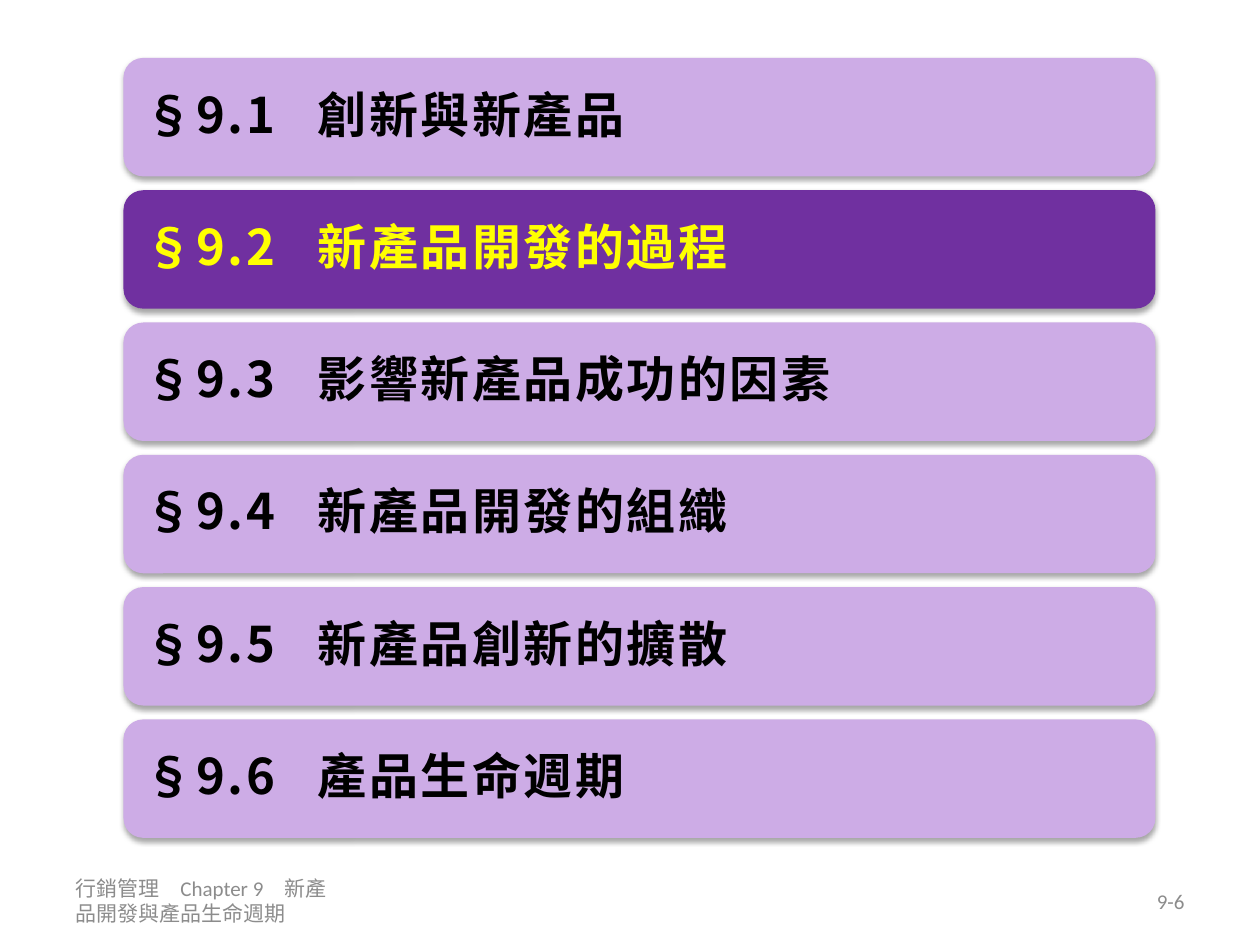
from dataclasses import dataclass

from lxml.etree import SubElement
from pptx import Presentation
from pptx.dml.color import RGBColor as Rgb
from pptx.enum.shapes import MSO_SHAPE as Shape
from pptx.enum.text import MSO_ANCHOR as Anchor, PP_ALIGN as Align
from pptx.oxml.ns import qn
from pptx.util import Inches, Pt

COLORS = {
    "pale": "CDACE6",
    "deep": "7030A0",
    "ink": "000000",
    "glow": "FFFF00",
    "gray": "8C8C8C",
}
HEAD_FONT = "Noto Sans CJK SC"
FOOT_FONT = "Calibri"
LEFT, TOP, WIDTH, HEIGHT = 0.98, 0.46, 8.19, 0.94
PITCH = 1.05
INSET = 0.05
PAD = 0.12
TAB = 1.37


@dataclass
class Topic:
    label: str
    title: str
    active: bool = False


@dataclass
class Note:
    text: str
    left: float
    align: Align


TOPICS = [
    Topic("§9.1", "創新與新產品"),
    Topic("§9.2", "新產品開發的過程", True),
    Topic("§9.3", "影響新產品成功的因素"),
    Topic("§9.4", "新產品開發的組織"),
    Topic("§9.5", "新產品創新的擴散"),
    Topic("§9.6", "產品生命週期"),
]
NOTES = [
    Note("行銷管理　Chapter 9　新產品開發與產品生命週期", 0.5, Align.LEFT),
    Note("9-6", 7.17, Align.RIGHT),
]


def color(key: str) -> Rgb:
    return Rgb.from_string(COLORS[key])


def add_text(slide, text: str, left: float, top: float, width: float, height: float):
    """Add a wrapped, vertically centred text box and return its frame."""
    box = slide.shapes.add_textbox(
        Inches(left), Inches(top), Inches(width), Inches(height)
    )
    frame = box.text_frame
    frame.word_wrap = True
    frame.vertical_anchor = Anchor.MIDDLE
    frame.text = text
    return frame


def style(run, name: str, size: float, key: str) -> None:
    run.font.name = name
    run.font.size = Pt(size)
    run.font.color.rgb = color(key)


def add_shadow(shape) -> None:
    shape.shadow.inherit = False
    effects = shape._element.spPr.find(qn("a:effectLst"))
    shadow = SubElement(
        effects,
        qn("a:outerShdw"),
        blurRad=str(Pt(3.1)),
        dist=str(Pt(1.8)),
        dir="5400000",
        rotWithShape="0",
    )
    tint = SubElement(shadow, qn("a:srgbClr"), val=COLORS["ink"])
    SubElement(tint, qn("a:alpha"), val="35000")


def add_bar(slide, topic: Topic, top: float) -> None:
    bar = slide.shapes.add_shape(
        Shape.ROUNDED_RECTANGLE,
        Inches(LEFT), Inches(top), Inches(WIDTH), Inches(HEIGHT),
    )
    bar.fill.solid()
    bar.fill.fore_color.rgb = color("deep" if topic.active else "pale")
    bar.line.fill.background()
    add_shadow(bar)


def add_title(slide, topic: Topic, top: float) -> None:
    frame = add_text(
        slide, f"{topic.label}\t{topic.title}",
        LEFT + INSET, top + INSET, WIDTH - 2 * INSET, HEIGHT - 2 * INSET,
    )
    frame.margin_left = frame.margin_right = Inches(PAD)
    frame.margin_top = frame.margin_bottom = Inches(PAD)
    para = frame.paragraphs[0]
    para.line_spacing = 0.9
    para.space_after = Pt(9.8)
    tabs = SubElement(para._p.get_or_add_pPr(), qn("a:tabLst"))
    SubElement(tabs, qn("a:tab"), pos=str(Inches(TAB)), algn="l")
    for run in para.runs:
        style(run, HEAD_FONT, 28, "glow" if topic.active else "ink")
        run.font.bold = True
        props = run._r.get_or_add_rPr()
        props.set("spc", "150")
        SubElement(props, qn("a:ea"), typeface=HEAD_FONT)


def add_note(slide, note: Note) -> None:
    frame = add_text(slide, note.text, note.left, 6.95, 2.33, 0.4)
    para = frame.paragraphs[0]
    para.alignment = note.align
    for run in para.runs:
        style(run, FOOT_FONT, 12, "gray")


def main() -> None:
    deck = Presentation()
    deck.slide_width, deck.slide_height = Inches(10), Inches(7.5)
    slide = deck.slides.add_slide(deck.slide_layouts[6])
    for note in NOTES:
        add_note(slide, note)
    for row, topic in enumerate(TOPICS):
        top = TOP + row * PITCH
        add_bar(slide, topic, top)
        add_title(slide, topic, top)
    deck.save("out.pptx")


if __name__ == "__main__":
    main()
